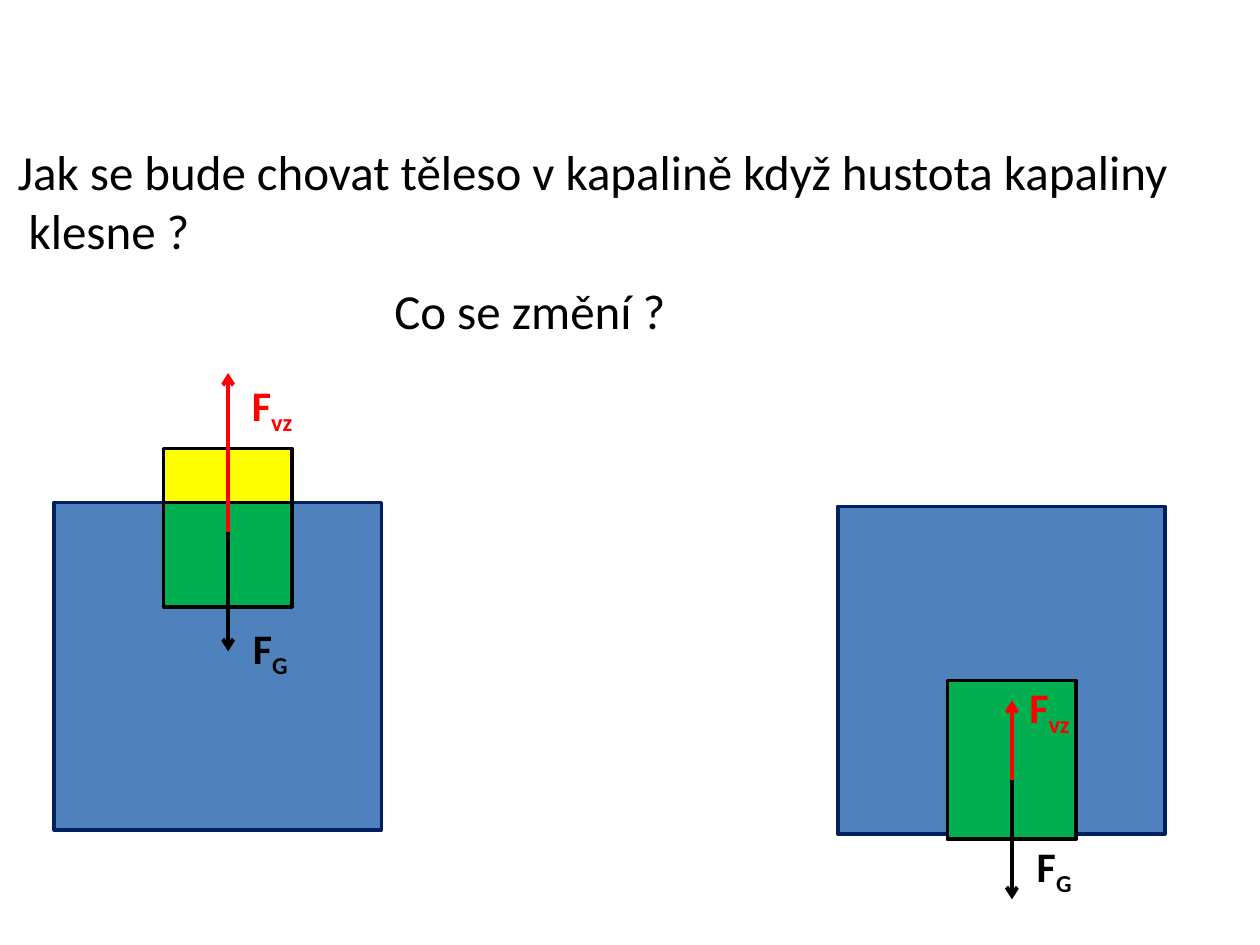
"""Builds a slide comparing a floating and a sunken body in a liquid."""
from lxml import etree
from pptx import Presentation
from pptx import util as u
from pptx.dml.color import RGBColor
from pptx.enum import shapes, text
from pptx.oxml.ns import qn


def color(value):
    return RGBColor.from_string(value)


def write(shape, lines, size, hue="000000", bold=False, subscript="", wrap=False):
    frame = shape.text_frame
    frame.text = lines[0]
    for line in lines[1:]:
        frame.add_paragraph().text = line
    frame_format = {"word_wrap": wrap, "vertical_anchor": text.MSO_ANCHOR.TOP,
                    "auto_size": text.MSO_AUTO_SIZE.SHAPE_TO_FIT_TEXT}
    for name, value in frame_format.items():
        setattr(frame, name, value)
    if subscript:
        run = frame.paragraphs[0].add_run()
        run.text = subscript
        run._r.get_or_add_rPr().set("baseline", "-25000")
    run_format = {"name": "Calibri", "size": u.Pt(size), "bold": bold}
    for paragraph in frame.paragraphs:
        paragraph.alignment = text.PP_ALIGN.LEFT
        for run in paragraph.runs:
            for name, value in run_format.items():
                setattr(run.font, name, value)
            run.font.color.rgb = color(hue)


presentation = Presentation()
presentation.slide_width, presentation.slide_height = u.Cm(25.4), u.Cm(19.05)
slide = presentation.slides.add_slide(presentation.slide_layouts[5])

title = slide.shapes.title
title_place = {"left": 0.1, "top": 2.72, "width": 23.95, "height": 2.64}
for name, value in title_place.items():
    setattr(title, name, u.Cm(value))
write(title, ["Jak se bude chovat těleso v kapalině když hustota kapaliny", " klesne ?"], 28)

question = slide.shapes.add_textbox(u.Cm(7.7), u.Cm(5.54), u.Cm(6.05), u.Cm(1.45))
write(question, ["Co se změní ?"], 28)

BLUE, NAVY, GREEN, YELLOW = "4F81BD", "002060", "00B050", "FFFF00"
BLACK, RED = "000000", "FF0000"
scenes = [
    {"left": 16.89, "tank": 10.21, "parts": [(13.72, 3.2, GREEN)],
     "center": 15.72, "lift": 14.12, "lift_label": (3.61, 13.61), "weight_label": 16.81},
    {"left": 1.09, "tank": 10.13, "parts": [(9.04, 3.2, YELLOW), (10.13, 2.11, GREEN)],
     "center": 10.72, "lift": 7.52, "lift_label": (3.74, 7.52), "weight_label": 12.42},
]

for scene in scenes:
    left = scene["left"]
    boxes = [(left, scene["tank"], 6.6, 6.6, BLUE, NAVY)]
    boxes += [(left + 2.21, top, 2.59, height, fill, BLACK)
              for top, height, fill in scene["parts"]]
    for *place, fill, outline in boxes:
        box = slide.shapes.add_shape(shapes.MSO_SHAPE.RECTANGLE, *map(u.Cm, place))
        box.shadow.inherit = False
        box.fill.solid()
        box.fill.fore_color.rgb = color(fill)
        box.line.color.rgb = color(outline)
        box.line.width = u.Pt(2)

    lift_left, lift_top = scene["lift_label"]
    labels = [("vz", RED, lift_left, lift_top, 1.88, True),
              ("G", BLACK, 3.76, scene["weight_label"], 1.27, False)]
    for subscript, hue, offset, top, width, wrap in labels:
        label = slide.shapes.add_textbox(u.Cm(left + offset), u.Cm(top), u.Cm(width), u.Cm(2.31))
        write(label, ["F"], 24, hue, True, subscript, wrap)

    middle, start = u.Cm(left + 3.51), u.Cm(scene["center"])
    for tip, hue in [(scene["center"] + 2.41, BLACK), (scene["lift"], RED)]:
        arrow = slide.shapes.add_connector(
            shapes.MSO_CONNECTOR.STRAIGHT, middle, start, middle, u.Cm(tip))
        arrow.line.color.rgb = color(hue)
        arrow.line.width = u.Pt(2.25)
        etree.SubElement(arrow.line._get_or_add_ln(), qn("a:tailEnd"), type="arrow")
        etree.SubElement(arrow._element.spPr, qn("a:effectLst"))

presentation.save("out.pptx")
